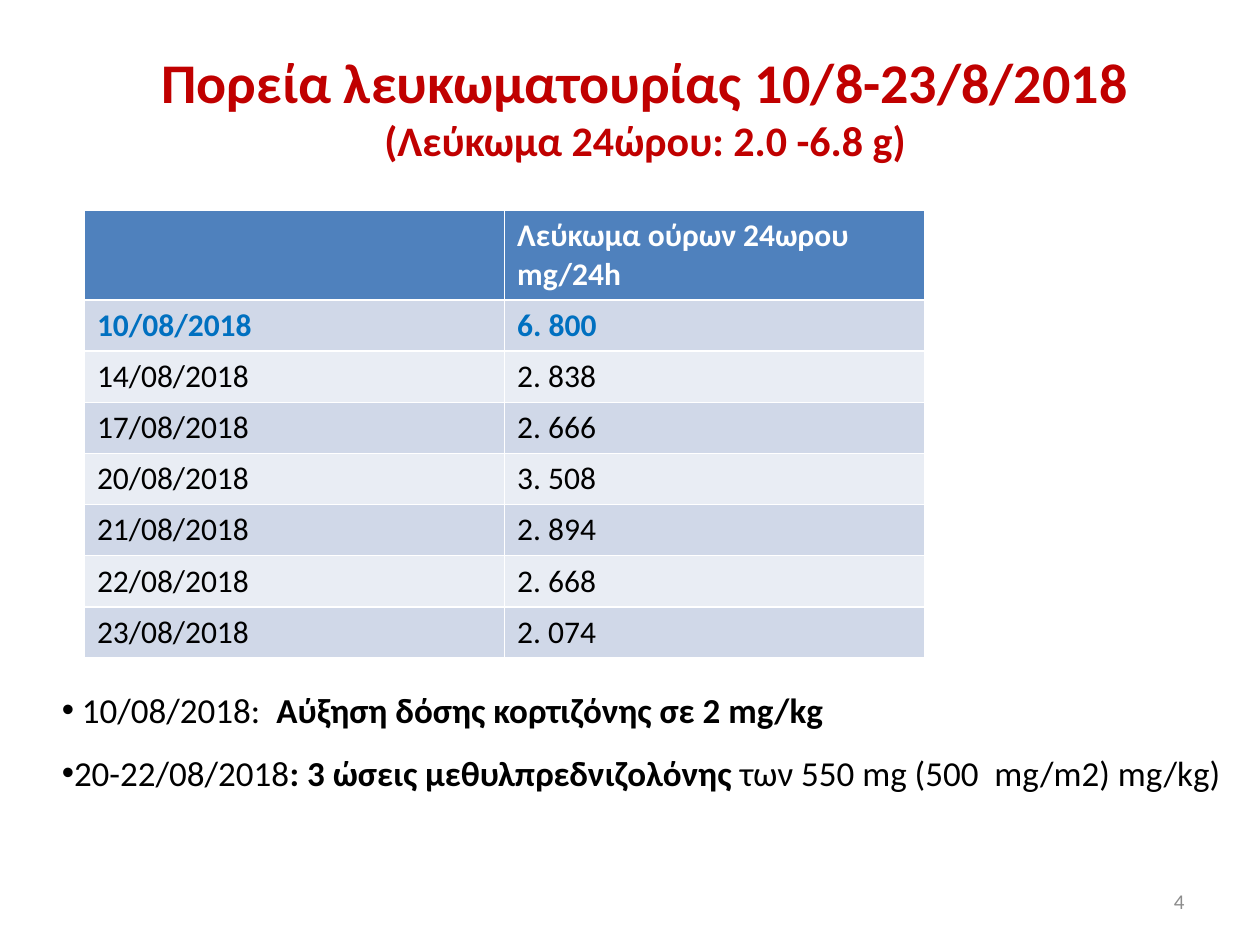
from pptx import Presentation
from pptx.dml.color import RGBColor
from pptx.enum.text import MSO_ANCHOR, MSO_AUTO_SIZE, PP_ALIGN
from pptx.util import Inches, Pt

MIDDLE, TOP = MSO_ANCHOR.MIDDLE, MSO_ANCHOR.TOP
NO_FIT = MSO_AUTO_SIZE.NONE
CENTER, RIGHT = PP_ALIGN.CENTER, PP_ALIGN.RIGHT
FONT = "Calibri"
COLORS = {
    "title": "C00000", "header": "4F81BD", "band_dark": "D0D8E8",
    "band_light": "E9EDF4", "highlight": "0070C0", "text": "000000",
    "white": "FFFFFF", "number": "8C8C8C",
}
HEADER = ("", "Λεύκωμα ούρων 24ωρου mg/24h")
MEASUREMENTS = [
    ("10/08/2018", "6. 800"),
    ("14/08/2018", "2. 838"),
    ("17/08/2018", "2. 666"),
    ("20/08/2018", "3. 508"),
    ("21/08/2018", "2. 894"),
    ("22/08/2018", "2. 668"),
    ("23/08/2018", "2. 074"),
]
TREATMENTS = [
    [(" 10/08/2018:  ", False), ("Αύξηση δόσης κορτιζόνης σε 2 mg/kg", True)],
    [("20-22/08/2018", False), (": 3 ώσεις μεθυλπρεδνιζολόνης ", True),
     ("των 550 mg (500  mg/m2) mg/kg)", False)],
]


def rgb(name):
    return RGBColor.from_string(COLORS[name])


def set_font(font, size, color, bold=False):
    font.name = FONT
    font.size = Pt(size)
    font.bold = bold
    font.color.rgb = rgb(color)


def place(sp, box):
    sp.left, sp.top, sp.width, sp.height = (Inches(v) for v in box)


def add_title(s, box):
    sp = s.shapes.title
    place(sp, box)
    tf = sp.text_frame
    tf.auto_size = NO_FIT
    tf.vertical_anchor = MIDDLE
    p = tf.paragraphs[0]
    p.alignment = CENTER
    set_font(p.font, 32, "title", True)
    p.add_run().text = "Πορεία λευκωματουρίας 10/8-23/8/2018"
    p.add_line_break()
    r = p.add_run()
    r.text = "(Λεύκωμα 24ώρου: 2.0 -6.8 g)"
    r.font.size = Pt(24)


def row_style(row):
    if row == 0:
        return "header", "white", True
    fill = "band_dark" if row % 2 else "band_light"
    return (fill, "highlight", True) if row == 1 else (fill, "text", False)


def add_measurements(s, box):
    rows = [HEADER] + MEASUREMENTS
    x, y, w, h = (Inches(v) for v in box)
    table = s.shapes.add_table(len(rows), len(HEADER), x, y, w, h).table
    for i, values in enumerate(rows):
        fill, color, bold = row_style(i)
        for j, value in enumerate(values):
            cell = table.cell(i, j)
            cell.fill.solid()
            cell.fill.fore_color.rgb = rgb(fill)
            cell.text = value
            set_font(cell.text_frame.paragraphs[0].font, 18, color, bold)


def add_treatments(s, box):
    sp = s.placeholders[1]
    place(sp, box)
    tf = sp.text_frame
    tf.auto_size = NO_FIT
    tf.vertical_anchor = TOP
    for i, parts in enumerate(TREATMENTS):
        p = tf.add_paragraph() if i else tf.paragraphs[0]
        p.line_spacing = 1.5
        p.space_before = Pt(0)
        set_font(p.font, 20, "text")
        pPr = p._p.get_or_add_pPr()
        pPr.set("marL", "0")
        pPr.set("indent", "0")
        for text, bold in parts:
            r = p.add_run()
            r.text = text
            r.font.bold = bold


def add_slide_number(s, box):
    tf = s.shapes.add_textbox(*(Inches(v) for v in box)).text_frame
    tf.word_wrap = True
    tf.vertical_anchor = MIDDLE
    p = tf.paragraphs[0]
    p.text = "4"
    p.alignment = RIGHT
    set_font(p.font, 12, "number")


def main():
    prs = Presentation()
    prs.slide_width, prs.slide_height = Inches(10), Inches(7.5)
    s = prs.slides.add_slide(prs.slide_layouts[1])
    add_title(s, (0.59, 0.29, 9.06, 1.1))
    add_measurements(s, (0.67, 1.67, 6.67, 3.25))
    add_treatments(s, (0.39, 5.25, 9.61, 1.62))
    add_slide_number(s, (7.17, 6.95, 2.33, 0.4))
    prs.save("out.pptx")


if __name__ == "__main__":
    main()
